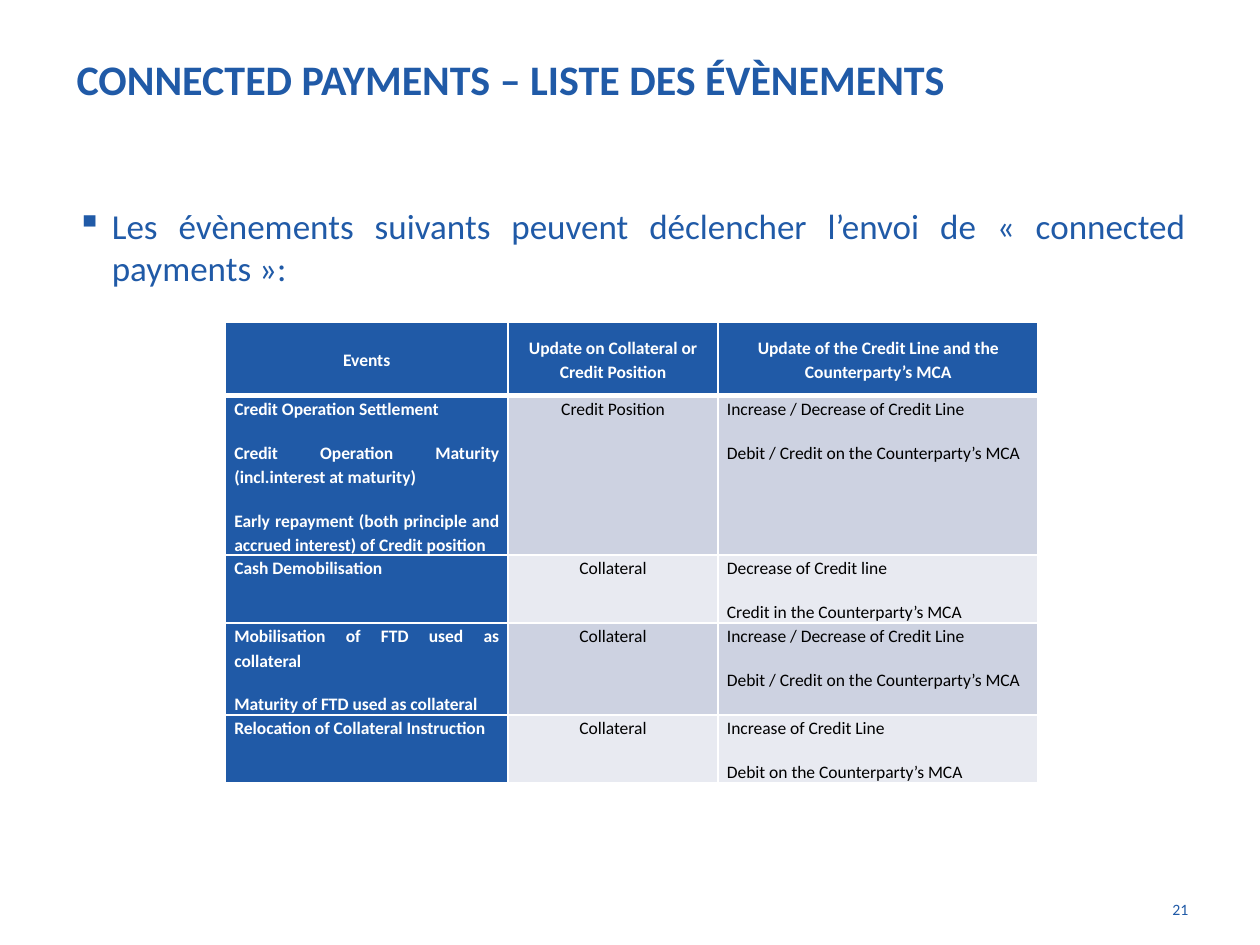
"""Build the slide listing the events that trigger connected payments."""
from lxml import etree
from pptx import Presentation
from pptx.dml.color import RGBColor
from pptx.enum.text import MSO_ANCHOR, PP_ALIGN
from pptx.oxml.ns import qn
from pptx.util import Inches, Pt

LEFT, CENTER, RIGHT, JUSTIFY = PP_ALIGN.LEFT, PP_ALIGN.CENTER, PP_ALIGN.RIGHT, PP_ALIGN.JUSTIFY
TOP, MIDDLE = MSO_ANCHOR.TOP, MSO_ANCHOR.MIDDLE
COLORS = {"blue": "205AA7", "white": "FFFFFF", "black": "000000",
          "band_dark": "CDD2E1", "band_light": "E8EAF1"}


def write(paragraph, text, size, color, bold, align):
    paragraph.text = text
    paragraph.alignment = align
    font = paragraph.runs[0].font
    font.color.rgb = RGBColor.from_string(COLORS[color])
    for name, value in {"name": "Calibri", "size": Pt(size), "bold": bold}.items():
        setattr(font, name, value)


def add_border(cell, side, width):
    line = etree.SubElement(cell._tc.get_or_add_tcPr(), qn(f"a:{side}"), w=str(Pt(width)))
    fill = etree.SubElement(line, qn("a:solidFill"))
    etree.SubElement(fill, qn("a:srgbClr"), val=COLORS["white"])


deck = Presentation()
deck.slide_width, deck.slide_height = Inches(10), Inches(7.5)
slide = deck.slides.add_slide(deck.slide_layouts[6])

texts = [
    ("CONNECTED PAYMENTS – LISTE DES ÉVÈNEMENTS", (0.51, 0, 9, 1.25), 24, True, LEFT, MIDDLE),
    ("21", (8.94, 7.09, 0.59, 0.39), 9, False, RIGHT, TOP),
    ("Les évènements suivants peuvent déclencher l’envoi de « connected payments »:",
     (0.51, 1.57, 9, 4.95), 20, False, JUSTIFY, TOP),
]
for text, place, size, bold, align, anchor in texts:
    frame = slide.shapes.add_textbox(*map(Inches, place)).text_frame
    frame.word_wrap = True
    frame.vertical_anchor = anchor
    paragraph = frame.paragraphs[0]
    if align == JUSTIFY:
        properties = paragraph._p.get_or_add_pPr()
        properties.set("marL", str(Inches(0.28)))
        properties.set("indent", str(Inches(-0.28)))
        etree.SubElement(properties, qn("a:buChar"), char="▪")
    write(paragraph, text, size, "blue", bold, align)

events = [
    [["Events"], ["Update on Collateral or Credit Position"],
     ["Update of the Credit Line and the Counterparty’s MCA"]],
    [["Credit Operation Settlement", "Credit Operation Maturity (incl.interest at maturity)",
      "Early repayment (both principle and accrued interest) of Credit position"],
     ["Credit Position"],
     ["Increase / Decrease of Credit Line", "Debit / Credit on the Counterparty’s MCA"]],
    [["Cash Demobilisation"], ["Collateral"],
     ["Decrease of Credit line", "Credit in the Counterparty’s MCA"]],
    [["Mobilisation of FTD used as collateral", "Maturity of FTD used as collateral"],
     ["Collateral"],
     ["Increase / Decrease of Credit Line", "Debit / Credit on the Counterparty’s MCA"]],
    [["Relocation of Collateral Instruction"], ["Collateral"],
     ["Increase of Credit Line", "Debit on the Counterparty’s MCA"]],
]
column_widths = [2.24, 1.67, 2.54]
row_heights = [0.58, 1.26, 0.54, 0.73, 0.54]
table = slide.shapes.add_table(
    len(row_heights), len(column_widths), Inches(1.79), Inches(2.56),
    Inches(sum(column_widths)), Inches(sum(row_heights))).table
for column, width in zip(table.columns, column_widths):
    column.width = Inches(width)
for row, height in zip(table.rows, row_heights):
    row.height = Inches(height)

cell_margins = {"margin_left": 0.07, "margin_right": 0.07, "margin_top": 0, "margin_bottom": 0}
for r, event in enumerate(events):
    for c, lines in enumerate(event):
        cell = table.cell(r, c)
        heading = r == 0 or c == 0
        for name, value in cell_margins.items():
            setattr(cell, name, Inches(value))
        cell.vertical_anchor = MIDDLE if r == 0 else TOP
        border_widths = {"lnL": 1, "lnR": 1, "lnT": 3 if r == 1 else 1, "lnB": 3 if r == 0 else 1}
        for side, width in border_widths.items():
            add_border(cell, side, width)
        band = "band_dark" if r % 2 else "band_light"
        cell.fill.solid()
        cell.fill.fore_color.rgb = RGBColor.from_string(COLORS["blue" if heading else band])
        for i, line in enumerate(lines):
            paragraph = cell.text_frame.add_paragraph() if i else cell.text_frame.paragraphs[0]
            write(paragraph, line, 10, "white" if heading else "black", heading,
                  CENTER if r == 0 or c == 1 else JUSTIFY)
            spacing = {"line_spacing": 1.15, "space_before": Pt(3 if i else 0), "space_after": Pt(8)}
            for name, value in spacing.items():
                setattr(paragraph, name, value)

deck.save("out.pptx")
